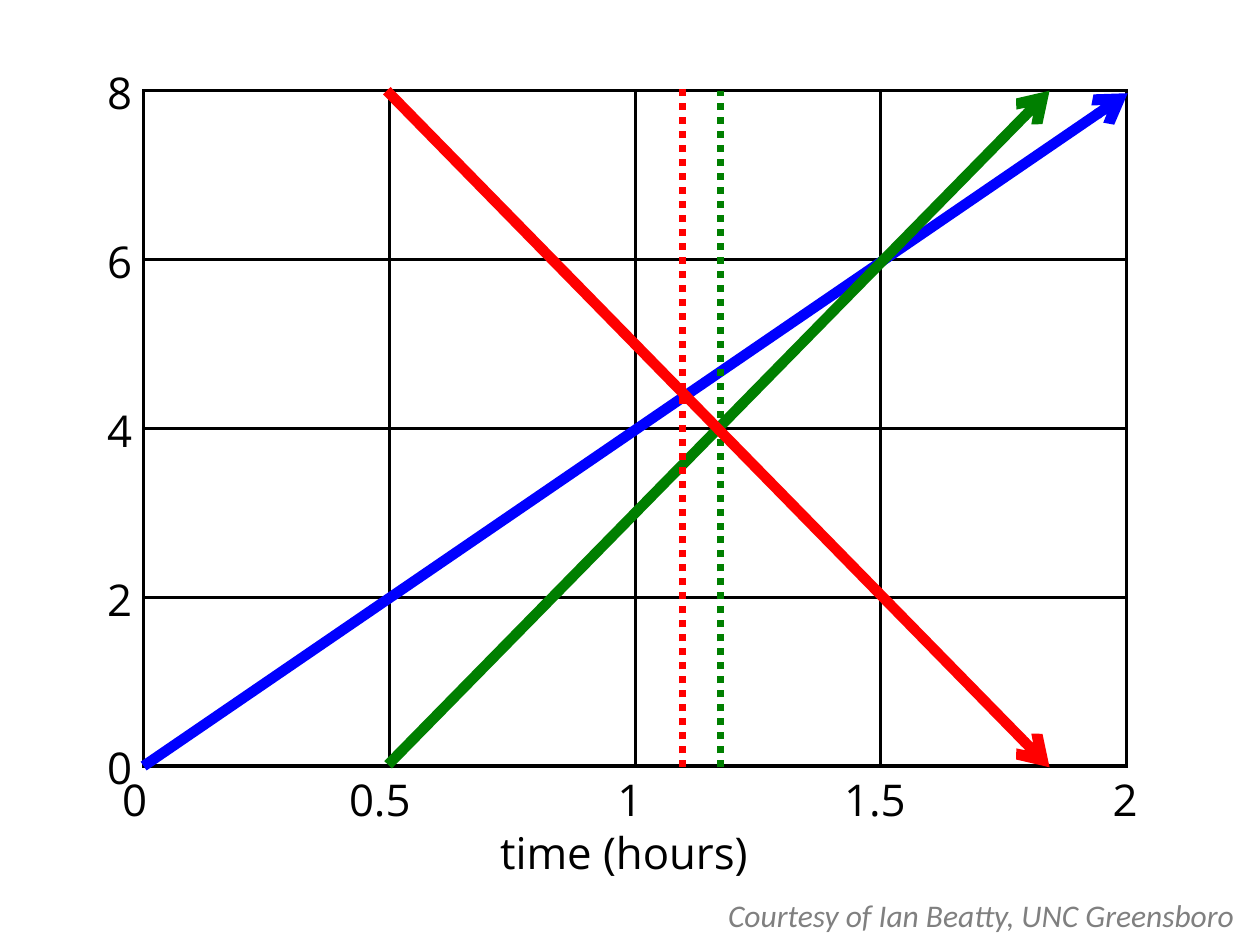
from lxml import etree
from pptx import Presentation
from pptx.dml.color import RGBColor
from pptx.enum.dml import MSO_LINE
from pptx.enum.shapes import MSO_CONNECTOR
from pptx.enum.text import MSO_ANCHOR, MSO_AUTO_SIZE
from pptx.oxml.ns import qn
from pptx.util import Pt

PX = 9144  # 100 px to the inch
BLACK = RGBColor(0, 0, 0)
GRAY = RGBColor(0x80, 0x80, 0x80)
BLUE = RGBColor(0, 0, 0xFF)
GREEN = RGBColor(0, 0x7F, 0)
RED = RGBColor(0xFF, 0, 0)
STRAIGHT = MSO_CONNECTOR.STRAIGHT
DOTS = MSO_LINE.ROUND_DOT
MIDDLE = MSO_ANCHOR.MIDDLE
GROW = MSO_AUTO_SIZE.SHAPE_TO_FIT_TEXT

deck = Presentation()
deck.slide_width, deck.slide_height = 1000 * PX, 750 * PX
slide = deck.slides.add_slide(deck.slide_layouts[6])
shapes = slide.shapes


def add_text(text, x, y, w, h, size=25, face="Open Sans", color=BLACK):
    box = shapes.add_textbox(int(x * PX), y * PX, w * PX, h * PX)
    frame = box.text_frame
    frame.word_wrap = False
    frame.auto_size = GROW
    para = frame.paragraphs[0]
    para.text = text
    para.font.size = Pt(size)
    para.font.name = face
    para.font.color.rgb = color
    return frame


def add_line(x1, y1, x2, y2, color, dotted=False):
    link = shapes.add_connector(STRAIGHT, x1 * PX, y1 * PX, x2 * PX, y2 * PX)
    link.line.color.rgb = color
    link.line.width = Pt(4 if dotted else 6)
    if dotted:
        link.line.dash_style = DOTS
    else:
        etree.SubElement(link.line._get_or_add_ln(), qn("a:tailEnd"), type="arrow")
    etree.SubElement(link._element.spPr, qn("a:effectLst"))


# Grid: 4 by 4 empty cells with black borders
grid = shapes.add_table(4, 4, 114 * PX, 72 * PX, 780 * PX, 536 * PX).table
grid.first_row = grid.horz_banding = False
for cell in grid.iter_cells():
    cell.fill.background()
    props = cell._tc.get_or_add_tcPr()
    for i, side in enumerate(("lnL", "lnR", "lnT", "lnB")):
        edge = etree.Element(qn("a:" + side), w=str(Pt(2)))
        fill = etree.SubElement(edge, qn("a:solidFill"))
        etree.SubElement(fill, qn("a:srgbClr"), val=str(BLACK))
        props.insert(i, edge)

# Axis labels: time below, even steps of 2 up the left side
labels = []
for i, text in enumerate(("0", "0.5", "1", "1.5", "2")):
    wide = 55 if "." in text else 22
    labels.append((text, 108 + 196.5 * i - wide / 2, 613, wide))
labels.append(("time (hours)", 397, 655, 207))
for i in range(5):
    labels.append((str(2 * i), 85, 588 - 134 * i, 22))
for text, x, y, wide in labels:
    frame = add_text(text, x, y, wide, 42)
    frame.vertical_anchor = MIDDLE
    frame.margin_left = frame.margin_right = 0
    frame.margin_top = frame.margin_bottom = 0

# Motion lines and the dotted times of meeting
add_line(114, 608, 895, 74, BLUE)
add_line(308, 607, 833, 72, GREEN)
add_line(572, 609, 572, 72, GREEN, dotted=True)
add_line(307, 72, 833, 609, RED)
add_line(542, 609, 542, 71, RED, dotted=True)

# Credit
credit = add_text("Courtesy of Ian Beatty, UNC Greensboro",
                  568, 706, 432, 40, 18, "Calibri", GRAY)
credit.paragraphs[0].font.italic = True

deck.save("out.pptx")
